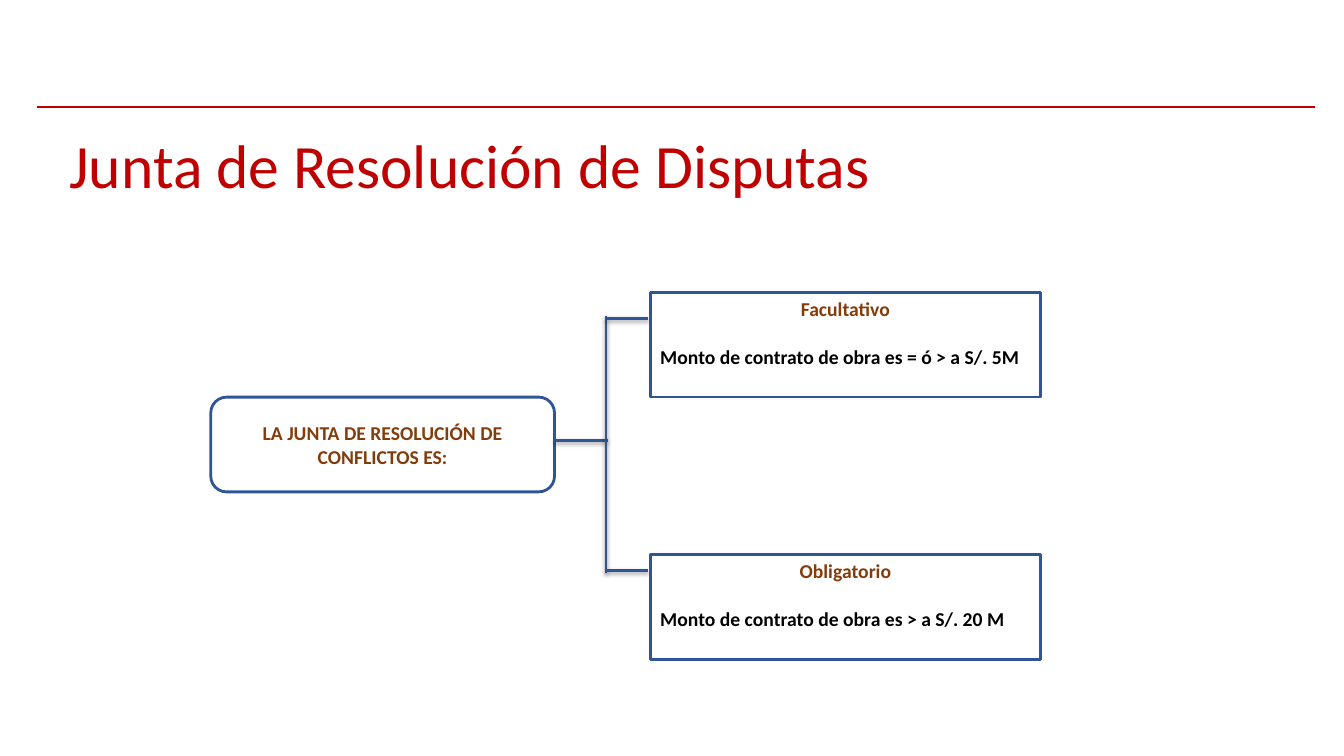
"""Build a slide on when a dispute board is optional or mandatory."""
from lxml.etree import SubElement
from pptx import Presentation
from pptx.dml.color import RGBColor
from pptx.enum.shapes import MSO_CONNECTOR, MSO_SHAPE
from pptx.enum.text import MSO_ANCHOR, PP_ALIGN
from pptx.oxml.ns import qn
from pptx.util import Inches, Pt

RED = RGBColor(0xC0, 0x00, 0x00)
BLUE = RGBColor(0x2F, 0x55, 0x97)
BROWN = RGBColor(0x84, 0x3C, 0x0B)
BLACK = RGBColor(0x00, 0x00, 0x00)
WHITE = RGBColor(0xFF, 0xFF, 0xFF)
FONT = "Calibri"


def style(item, values):
    """Set each named attribute of an item."""
    for name, value in values.items():
        setattr(item, name, value)


def write(par, text, size, color, bold=False, **layout):
    """Write one run of text into a paragraph."""
    run = par.add_run()
    run.text = text
    style(run.font, {"name": FONT, "size": Pt(size), "bold": bold})
    run.font.color.rgb = color
    style(par, layout)


def rule(slide, start, end, color, width, shadow=False):
    """Draw a straight line, with a soft shadow if asked."""
    line = slide.shapes.add_connector(
        MSO_CONNECTOR.STRAIGHT, *map(Inches, start + end))
    line.line.color.rgb = color
    line.line.width = Pt(width)
    effects = SubElement(line._element.spPr, qn("a:effectLst"))
    if shadow:
        outer = SubElement(effects, qn("a:outerShdw"), blurRad=str(Pt(3.1)),
                           dist=str(Pt(1.6)), dir="5400000", rotWithShape="0")
        tint = SubElement(outer, qn("a:srgbClr"), val="000000")
        SubElement(tint, qn("a:alpha"), val="38000")


def frame(slide, kind, box, anchor):
    """Add an outlined white shape and return it."""
    shape = slide.shapes.add_shape(kind, *map(Inches, box))
    shape.shadow.inherit = False
    shape.fill.solid()
    shape.fill.fore_color.rgb = WHITE
    shape.line.color.rgb = BLUE
    shape.line.width = Pt(2)
    style(shape.text_frame, {"word_wrap": True, "vertical_anchor": anchor})
    return shape


def header(slide, box):
    """Place the title under its red rule."""
    left, top, width, height = box
    rule(slide, (left - 0.22, top - 0.14), (left + 12.45, top - 0.14), RED, 1.5)
    text = slide.shapes.add_textbox(*map(Inches, box)).text_frame
    style(text, {"word_wrap": True, "vertical_anchor": MSO_ANCHOR.MIDDLE})
    write(text.paragraphs[0], "Junta de Resolución de Disputas", 44, RED,
          line_spacing=0.9)


def root(slide, box):
    """Place the rounded box that opens the tree."""
    shape = frame(slide, MSO_SHAPE.ROUNDED_RECTANGLE, box, MSO_ANCHOR.MIDDLE)
    write(shape.text_frame.paragraphs[0],
          "LA JUNTA DE RESOLUCIÓN DE CONFLICTOS ES:", 14, BROWN, True,
          alignment=PP_ALIGN.CENTER)


def case(slide, box, name, detail):
    """Place a case box with its heading and condition."""
    text = frame(slide, MSO_SHAPE.RECTANGLE, box, MSO_ANCHOR.TOP).text_frame
    write(text.paragraphs[0], name, 14, BROWN, True,
          alignment=PP_ALIGN.CENTER)
    write(text.add_paragraph(), detail, 14, BLACK, True,
          alignment=PP_ALIGN.JUSTIFY, space_before=Pt(17))


def fork(slide, box, stem):
    """Draw the bracket that leads from the root to both cases."""
    left, top, width, height = box
    right, low = left + width, top + height
    for start, end in (
        ((left - 0.51, stem), (left + 0.02, stem)),
        ((left, top - 0.02), (left, low + 0.02)),
        ((left, top), (right, top)),
        ((left, low), (right, low)),
    ):
        rule(slide, start, end, BLUE, 2, shadow=True)


def tree(slide, box):
    """Place the root, the bracket and the two cases."""
    left, top, width, height = box
    root(slide, (left, top + 1.04, 3.41, 0.94))
    fork(slide, (left + 3.92, top + 0.26, 0.42, 2.5), top + 1.47)
    cases = (
        ("Facultativo", "Monto de contrato de obra es = ó > a S/. 5M"),
        ("Obligatorio", "Monto de contrato de obra es > a S/. 20 M"),
    )
    size = 1.04
    for row, (name, detail) in enumerate(cases):
        place = (left + 4.36, top + row * (height - size), width - 4.36, size)
        case(slide, place, name, detail)


def main():
    """Build and save the deck."""
    deck = Presentation()
    style(deck, {"slide_width": Inches(13.33), "slide_height": Inches(7.5)})
    slide = deck.slides.add_slide(deck.slide_layouts[6])
    header(slide, (0.59, 1.2, 11.5, 0.94))
    tree(slide, (2.09, 2.9, 8.23, 3.64))
    deck.save("out.pptx")


if __name__ == "__main__":
    main()
